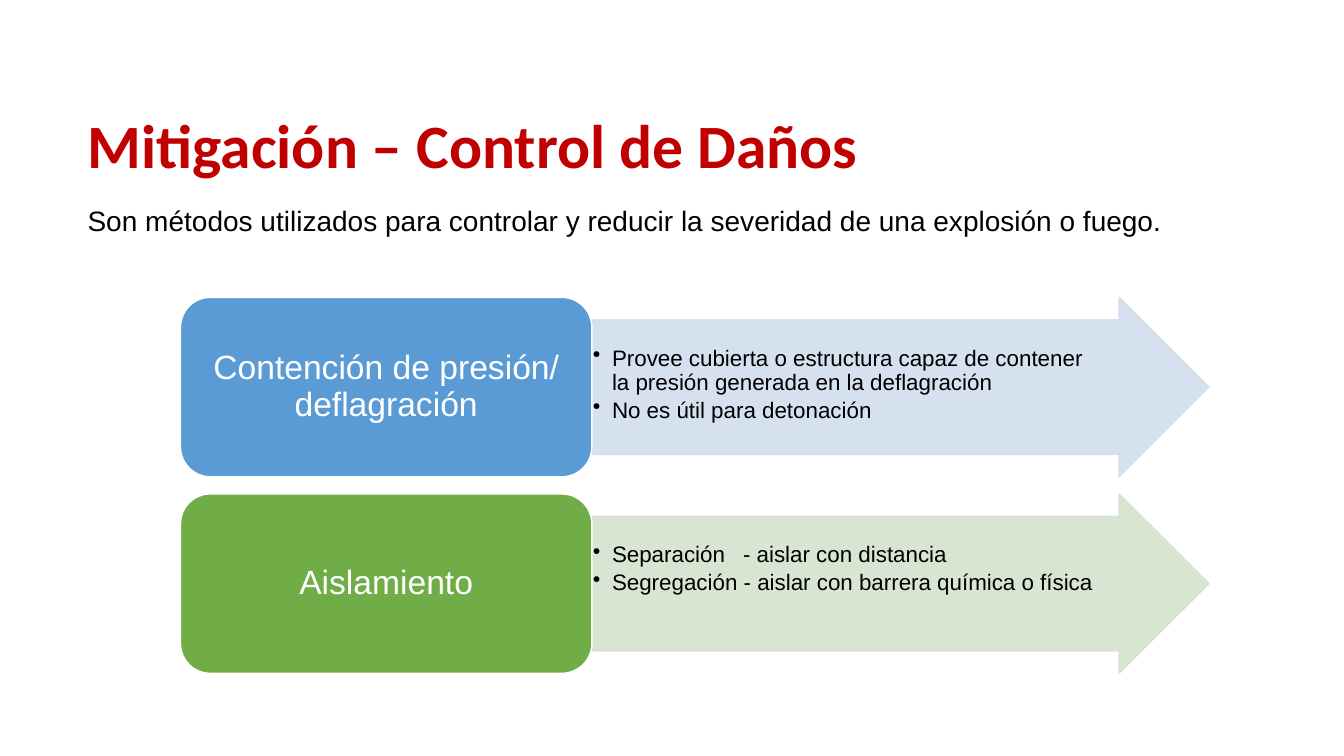
from lxml.etree import SubElement
from pptx import Presentation
from pptx.dml.color import RGBColor
from pptx.enum.shapes import MSO_SHAPE
from pptx.enum.text import MSO_ANCHOR, PP_ALIGN
from pptx.oxml.ns import qn
from pptx.util import Pt

PX = 9144
COLORS = {
    "title": "C00000",
    "text": "000000",
    "white": "FFFFFF",
    "blue": "5B9BD5",
    "light_blue": "D2DEEF",
    "green": "70AD47",
    "light_green": "D5E3CF",
}
METHODS = [
    ("Contención de presión/ deflagración", "blue", "light_blue",
     ["Provee cubierta o estructura capaz de contener la presión generada en la deflagración",
      "No es útil para detonación"]),
    ("Aislamiento", "green", "light_green",
     ["Separación\t- aislar con distancia",
      "Segregación - aislar con barrera química o física"]),
]
METHOD_TOP, METHOD_STEP, METHOD_HEIGHT = 295, 195, 178
LABEL_LEFT, LABEL_WIDTH, ARROW_WIDTH = 179, 408, 612
BULLET_INDENT, DASH_TAB = 19, 149


def color(name):
    return RGBColor.from_string(COLORS[name])


def add_run(paragraph, text, size, color_name, font="Arial", bold=False):
    paragraph.line_spacing = 0.9
    run = paragraph.add_run()
    run.text = text
    run.font.name = font
    run.font.size = Pt(size)
    run.font.bold = bold
    run.font.color.rgb = color(color_name)


def add_text(slide, left, top, width, height):
    shape = slide.shapes.add_textbox(left * PX, top * PX, width * PX, height * PX)
    shape.text_frame.word_wrap = True
    return shape


def add_block(slide, preset, left, top, width, fill, line):
    shape = slide.shapes.add_shape(preset, left * PX, top * PX, width * PX, METHOD_HEIGHT * PX)
    shape.shadow.inherit = False
    shape.fill.solid()
    shape.fill.fore_color.rgb = color(fill)
    shape.line.color.rgb = color(line)
    shape.line.width = Pt(1)
    shape.text_frame.word_wrap = True
    return shape


def set_opacity(shape, percent):
    for element in shape._element.spPr.iter(qn("a:srgbClr")):
        SubElement(element, qn("a:alpha")).set("val", str(percent * 1000))


def add_bullet(paragraph, text):
    properties = paragraph._p.get_or_add_pPr()
    properties.set("marL", str(BULLET_INDENT * PX))
    properties.set("indent", str(-BULLET_INDENT * PX))
    SubElement(properties, qn("a:buChar")).set("char", "•")
    if "\t" in text:
        tabs = SubElement(properties, qn("a:tabLst"))
        tab = SubElement(tabs, qn("a:tab"))
        tab.set("pos", str(DASH_TAB * PX))
        tab.set("algn", "l")
    paragraph.alignment = PP_ALIGN.LEFT
    paragraph.space_after = Pt(2.4)
    add_run(paragraph, text, 16, "text")


def add_arrow(slide, top, fill, bullets):
    arrow = add_block(slide, MSO_SHAPE.RIGHT_ARROW, LABEL_LEFT + LABEL_WIDTH, top,
                      ARROW_WIDTH, fill, fill)
    arrow.adjustments[0] = 0.75
    arrow.adjustments[1] = 0.5
    set_opacity(arrow, 90)
    frame = arrow.text_frame
    frame.vertical_anchor = MSO_ANCHOR.TOP
    frame.margin_left = frame.margin_bottom = PX
    frame.margin_top = 27 * PX
    frame.margin_right = 46 * PX
    for index, text in enumerate(bullets):
        add_bullet(frame.add_paragraph() if index else frame.paragraphs[0], text)


def add_label(slide, top, fill, text):
    label = add_block(slide, MSO_SHAPE.ROUNDED_RECTANGLE, LABEL_LEFT, top,
                      LABEL_WIDTH, fill, "white")
    label.text_frame.vertical_anchor = MSO_ANCHOR.MIDDLE
    paragraph = label.text_frame.paragraphs[0]
    paragraph.alignment = PP_ALIGN.CENTER
    add_run(paragraph, text, 24, "white")


def main():
    presentation = Presentation()
    presentation.slide_width = 1333 * PX
    presentation.slide_height = 750 * PX
    slide = presentation.slides.add_slide(presentation.slide_layouts[6])

    title = add_text(slide, 77, 93, 900, 108)
    title.fill.solid()
    title.fill.fore_color.rgb = color("white")
    title.text_frame.vertical_anchor = MSO_ANCHOR.MIDDLE
    add_run(title.text_frame.paragraphs[0], "Mitigación – Control de Daños",
            44, "title", "Calibri", True)

    for index, (name, fill, light_fill, bullets) in enumerate(METHODS):
        top = METHOD_TOP + index * METHOD_STEP
        add_arrow(slide, top, light_fill, bullets)
        add_label(slide, top, fill, name)

    summary = add_text(slide, 77, 201, 1210, 48)
    add_run(summary.text_frame.paragraphs[0],
            "Son métodos utilizados para controlar y reducir la severidad de una explosión o fuego.",
            20, "text")

    presentation.save("out.pptx")


if __name__ == "__main__":
    main()
